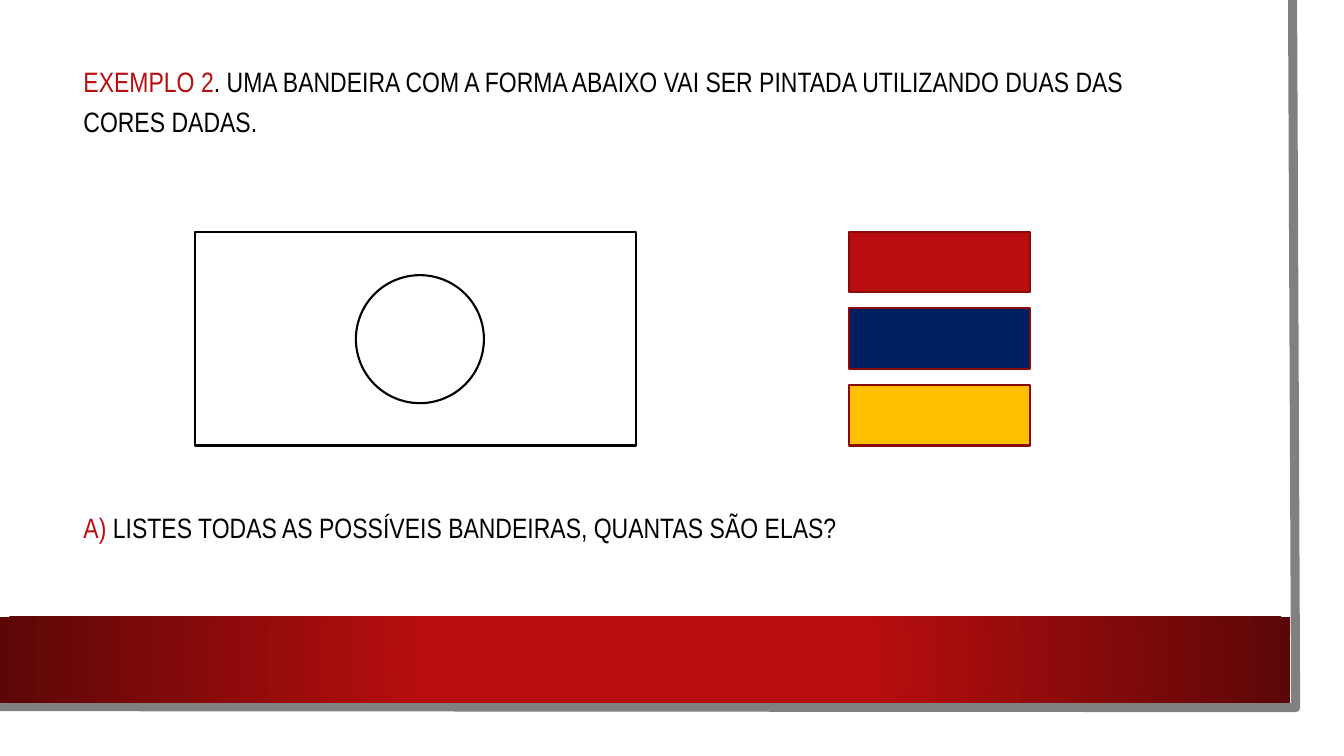
from lxml import etree
from pptx import Presentation
from pptx.dml.color import RGBColor
from pptx.enum.shapes import MSO_SHAPE as Shape
from pptx.enum.text import MSO_ANCHOR as Anchor
from pptx.oxml import parse_xml
from pptx.oxml.ns import nsdecls, qn
from pptx.util import Inches, Pt

COLORS = {"red": "B80E0F", "dark": "5C0707", "edge": "880A0B", "navy": "002060",
          "gold": "FFC000", "gray": "808080", "white": "FFFFFF", "black": "000000"}


def add_shape(kind, x, y, w, h, fill, line=None):
    sp = s.shapes.add_shape(kind, Inches(x), Inches(y), Inches(w), Inches(h))
    sp.shadow.inherit = False
    sp.fill.solid()
    sp.fill.fore_color.rgb = RGBColor.from_string(COLORS[fill])
    if line:
        sp.line.color.rgb = RGBColor.from_string(COLORS[line])
        sp.line.width = Pt(1.5)
    else:
        sp.line.fill.background()
    return sp


def add_text(y, label, text):
    tf = s.shapes.add_textbox(Inches(0.73), Inches(y), Inches(11.37), Inches(1.23)).text_frame
    tf.word_wrap = True
    tf.vertical_anchor = Anchor.MIDDLE
    p = tf.paragraphs[0]
    p.line_spacing = 1.2
    p.font.name = "Arial Narrow"
    p.font.size = Pt(20)
    for words, color in ((label, "red"), (text, "black")):
        r = p.add_run()
        r.text = words
        r.font.color.rgb = RGBColor.from_string(COLORS[color])


prs = Presentation()
prs.slide_width, prs.slide_height = Inches(13.33), Inches(7.5)
s = prs.slides.add_slide(prs.slide_layouts[6])

# Gray page edge along the right and bottom
builder = s.shapes.build_freeform(Inches(12.82), 0)
builder.add_line_segments([(Inches(12.85), Inches(7.02)), (Inches(-0.03), Inches(7.01))],
                          close=False)
edge = builder.convert_to_shape()
edge.shadow.inherit = False
edge.fill.background()
edge.line.color.rgb = RGBColor.from_string(COLORS["gray"])
edge.line.width = Pt(6.5)

# Red band, darkening from the centre outwards
band = add_shape(Shape.RECTANGLE, 0, 6.12, 12.8, 0.85, "red")
band.fill.gradient()
for stop, color, position in zip(band.fill.gradient_stops, ("red", "dark"), (0.34, 1)):
    stop.color.rgb = RGBColor.from_string(COLORS[color])
    stop.position = position
grad = band._element.spPr.find(qn("a:gradFill"))
grad.remove(grad.find(qn("a:lin")))
grad.append(parse_xml(f'<a:path {nsdecls("a")} path="circle"/>'))
etree.SubElement(grad.find(qn("a:path")), qn("a:fillToRect"),
                 dict.fromkeys("ltrb", "50000"))

# Question
add_text(4.58, "A) ", "LISTES TODAS AS POSSÍVEIS BANDEIRAS, QUANTAS SÃO ELAS?")

# Flag to be painted
add_shape(Shape.RECTANGLE, 1.93, 2.3, 4.38, 2.12, "white", "black")
add_shape(Shape.OVAL, 3.53, 2.73, 1.27, 1.27, "white", "black")

# Available colours
for row, color in enumerate(("red", "navy", "gold")):
    add_shape(Shape.RECTANGLE, 8.42, 2.3 + row * 0.76, 1.8, 0.6, color, "edge")

# Statement
add_text(0.36, "EXEMPLO 2", ". UMA BANDEIRA COM A FORMA ABAIXO VAI SER PINTADA "
         "UTILIZANDO DUAS DAS CORES DADAS.")

prs.save("out.pptx")
